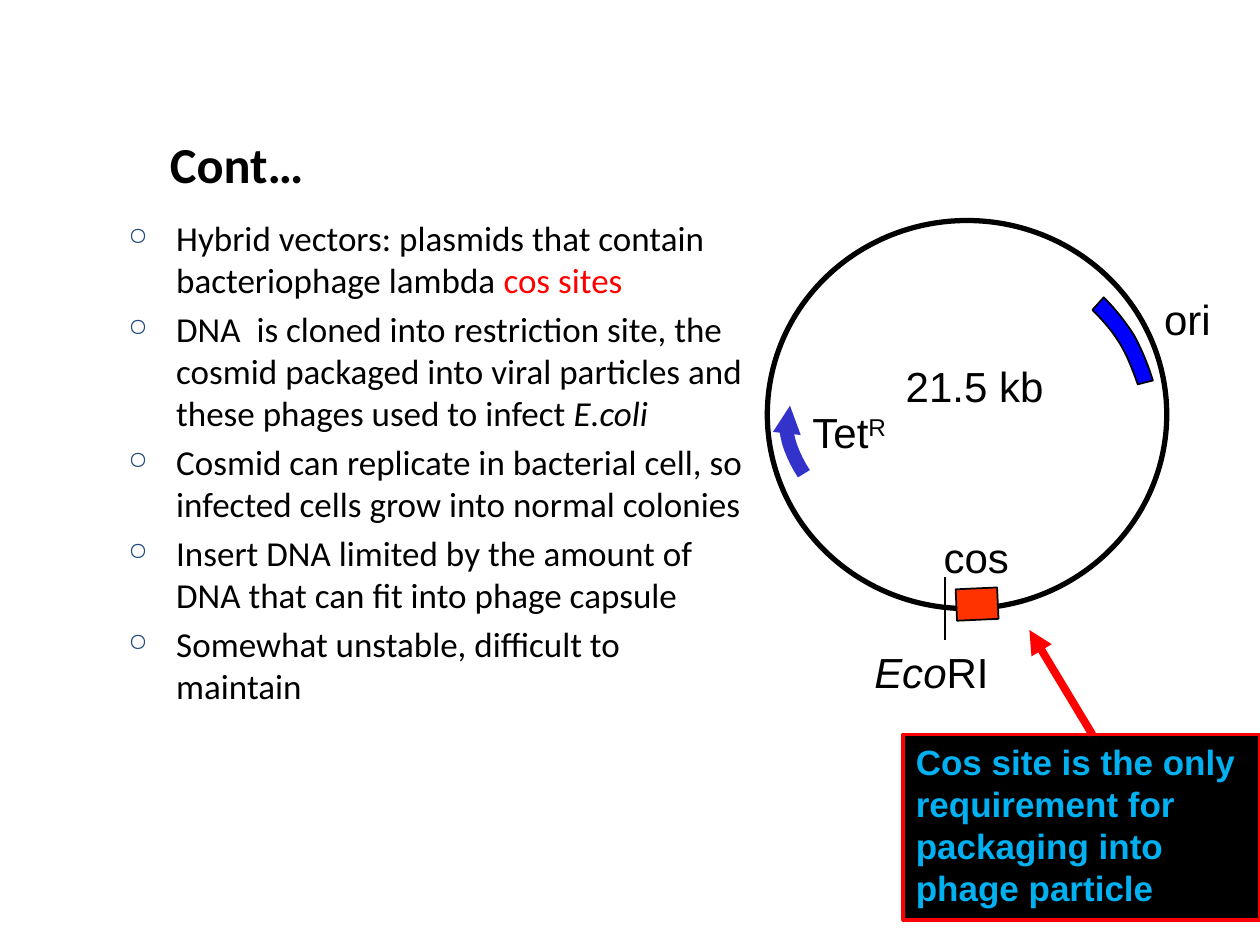
from lxml import etree
from pptx import Presentation
from pptx.dml.color import RGBColor
from pptx.enum.shapes import MSO_CONNECTOR, MSO_SHAPE
from pptx.enum.text import MSO_ANCHOR, PP_ALIGN
from pptx.oxml.ns import qn
from pptx.util import Pt

EMU_PER_PX = 9144
STRAIGHT = MSO_CONNECTOR.STRAIGHT
OVAL, RECTANGLE = MSO_SHAPE.OVAL, MSO_SHAPE.RECTANGLE
MIDDLE, TOP, LEFT = MSO_ANCHOR.MIDDLE, MSO_ANCHOR.TOP, PP_ALIGN.LEFT
COLORS = {
    "black": "000000", "red": "FF0000", "cos": "FF3300", "ori": "0000FF",
    "tet": "3333CC", "callout": "00B0F0", "bullet": "1F497D",
}
BULLETS = [
    [("Hybrid vectors: plasmids that contain bacteriophage lambda ", {}),
     ("cos sites", {"color": "red"})],
    [("DNA  is cloned into restriction site, the cosmid packaged into viral "
      "particles and these phages used to infect ", {}),
     ("E.coli", {"italic": True})],
    [("Cosmid can replicate in bacterial cell, so infected cells grow into "
      "normal colonies", {})],
    [("Insert DNA limited by the amount of DNA that can fit into phage capsule", {})],
    [("Somewhat unstable, difficult to maintain", {})],
]
LABELS = [
    ((739, 417, 75, 50), True, [("cos", {})]),
    ((635, 318, 84, 50), False, [("Tet", {}), ("R", {"raised": True})]),
    ((684, 508, 142, 50), True, [("Eco", {"italic": True}), ("RI", {})]),
    ((709, 281, 130, 50), False, [("21.5 kb", {})]),
    ((914, 228, 57, 50), False, [("ori", {})]),
]


def px(*values):
    """Turn px lengths into a list of EMU lengths."""
    return [round(value * EMU_PER_PX) for value in values]


def rgb(name):
    """Look up a named colour."""
    return RGBColor.from_string(COLORS[name])


def add_spans(para, spans, font, size, color="black", bold=False):
    """Write the formatted spans of one paragraph."""
    para.alignment = LEFT
    for text, style in spans:
        span = para.add_run()
        span.text = text
        span.font.name, span.font.size = font, Pt(size)
        span.font.bold = bold
        span.font.italic = style.get("italic", False)
        span.font.color.rgb = rgb(style.get("color", color))
        if style.get("raised"):
            span.font._element.set("baseline", "30000")


def add_text(page, place, spans, font, size, wrap=True, bold=False, anchor=TOP):
    """Add a text box with one paragraph."""
    frame = page.shapes.add_textbox(*px(*place)).text_frame
    frame.word_wrap, frame.vertical_anchor = wrap, anchor
    add_spans(frame.paragraphs[0], spans, font, size, bold=bold)


def set_bullet(para):
    """Give a paragraph a hanging ring bullet."""
    props = para._p.get_or_add_pPr()
    hang, = px(38)
    props.set("marL", str(hang))
    props.set("indent", str(-hang))
    color = etree.SubElement(props, qn("a:buClr"))
    etree.SubElement(color, qn("a:srgbClr"), val=COLORS["bullet"])
    etree.SubElement(props, qn("a:buSzPct"), val="70000")
    etree.SubElement(props, qn("a:buChar"), char="○")


def add_bullets(page, place, items):
    """Add the bulleted list."""
    frame = page.shapes.add_textbox(*px(*place)).text_frame
    frame.word_wrap = True
    for index, spans in enumerate(items):
        para = frame.paragraphs[0] if index == 0 else frame.add_paragraph()
        set_bullet(para)
        if index:
            para.space_before = Pt(4)
        add_spans(para, spans, "Calibri", 20)


def style_shape(shape, fill, line, width):
    """Set fill and outline, and drop the shadow."""
    shape.shadow.inherit = False
    if fill:
        shape.fill.solid()
        shape.fill.fore_color.rgb = rgb(fill)
    else:
        shape.fill.background()
    shape.line.color.rgb = rgb(line)
    shape.line.width = Pt(width)


def add_shape(page, kind, place, fill, line, width):
    """Add a styled preset shape."""
    shape = page.shapes.add_shape(kind, *px(*place))
    style_shape(shape, fill, line, width)
    return shape


def add_arrowhead(shape, end, size):
    """Put a triangle on the headEnd or tailEnd of a shape's line."""
    outline = shape._element.spPr.find(qn("a:ln"))
    etree.SubElement(outline, qn("a:" + end), type="triangle", w=size, len=size)


def add_line(page, start, finish, color, width):
    """Add a straight connector."""
    connector = page.shapes.add_connector(STRAIGHT, *px(*start, *finish))
    connector.line.color.rgb = rgb(color)
    connector.line.width = Pt(width)
    etree.SubElement(connector._element.spPr, qn("a:effectLst"))
    return connector


def curve(a, b, c, d, steps=12):
    """Sample a cubic curve from a to d."""
    points = []
    for step in range(steps + 1):
        t = step / steps
        u = 1 - t
        points.append(tuple(
            u**3 * a[i] + 3 * u * u * t * b[i] + 3 * u * t * t * c[i] + t**3 * d[i]
            for i in range(2)))
    return points


def add_outline(page, points, close, fill, line, width):
    """Add a freeform through the points."""
    start, *rest = [tuple(px(*point)) for point in points]
    builder = page.shapes.build_freeform(*start)
    builder.add_line_segments(rest, close=close)
    shape = builder.convert_to_shape()
    style_shape(shape, fill, line, width)
    return shape


def add_plasmid(page):
    """Draw the cosmid map with its sites and labels."""
    add_shape(page, OVAL, (609, 175, 317, 308), None, "black", 3)
    cos_site = add_shape(page, RECTANGLE, (759, 467, 33, 25), "cos", "black", 1)
    cos_site.rotation = 357.4
    add_line(page, (750, 458), (750, 508), "black", 1)
    inner = (curve((867, 246), (875, 254), (883, 263), (889, 273))
             + curve((889, 273), (895, 283), (899, 294), (903, 305)))
    outer = (curve((915, 302), (911, 289), (906, 277), (900, 266))
             + curve((900, 266), (893, 255), (885, 245), (876, 236)))
    add_outline(page, inner + outer, True, "ori", "black", 1)
    tet_arc = curve((627, 322), (620, 335), (625, 356), (638, 376))
    tet = add_outline(page, tet_arc, False, None, "tet", 8)
    add_arrowhead(tet, "headEnd", "sm")
    for place, wrap, spans in LABELS:
        add_text(page, place, spans, "Arial", 24, wrap)


def add_callout(page):
    """Add the callout box and its arrow to the cos site."""
    box = add_shape(page, RECTANGLE, (717, 583, 283, 147), "black", "red", 2.25)
    frame = box.text_frame
    frame.word_wrap, frame.vertical_anchor = True, TOP
    text = "Cos site is the only requirement for packaging into phage particle"
    add_spans(frame.paragraphs[0], [(text, {})], "Arial", 20, "callout", True)
    arrow = add_line(page, (867, 583), (817, 500), "red", 4.5)
    add_arrowhead(arrow, "tailEnd", "med")


def main():
    """Build and save the slide."""
    deck = Presentation()
    deck.slide_width, deck.slide_height = px(1000, 750)
    page = deck.slides.add_slide(deck.slide_layouts[6])
    add_bullets(page, (92, 167, 508, 583), BULLETS)
    add_plasmid(page)
    add_callout(page)
    add_text(page, (125, 100, 450, 59), [("Cont…", {})], "Calibri", 28.8,
             bold=True, anchor=MIDDLE)
    deck.save("out.pptx")


if __name__ == "__main__":
    main()
